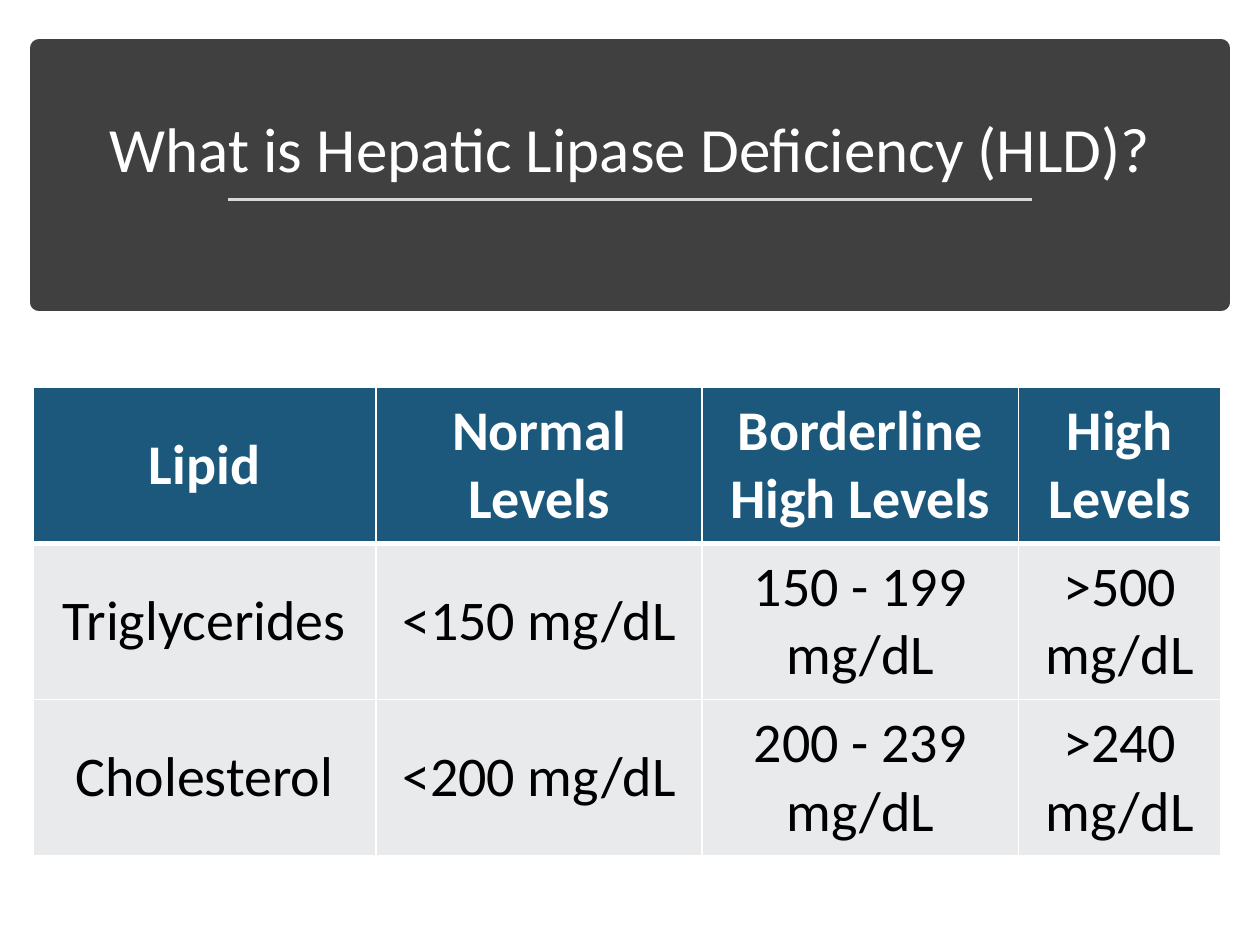
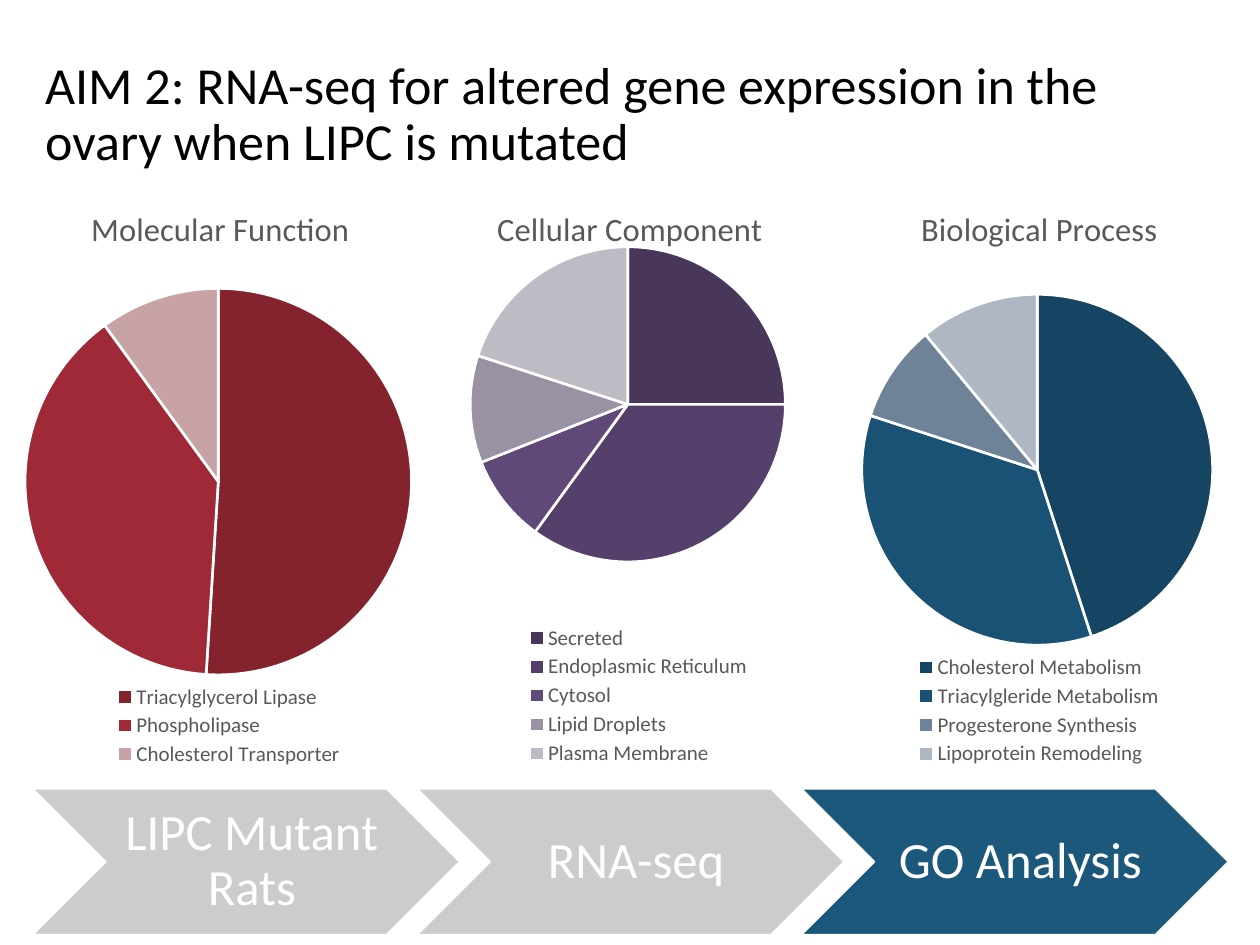
import pptx
import pptx.chart.data
import pptx.dml.color
import pptx.enum.chart
import pptx.enum.shapes
import pptx.enum.text
import pptx.oxml
import pptx.oxml.ns
import pptx.util

Pt = pptx.util.Pt
qn = pptx.oxml.ns.qn
RGB = pptx.dml.color.RGBColor.from_string
ALIGN = pptx.enum.text.PP_ALIGN
ANCHOR = pptx.enum.text.MSO_ANCHOR
SHAPE = pptx.enum.shapes.MSO_SHAPE

FONT = "Calibri"
COLORS = {
    "white": "FFFFFF", "black": "000000", "band": "404040", "rule": "D9D9D9",
    "accent": "1B587C", "row": "E8EAEC", "inactive": "CCCCCC", "chart text": "595959",
}


def write(frame, text, size, color, align=ALIGN.CENTER, anchor=ANCHOR.MIDDLE, bold=False, spacing=0.9):
    """Fill a text frame with one formatted paragraph."""
    frame.word_wrap = True
    frame.vertical_anchor = anchor
    para = frame.paragraphs[0]
    para.alignment = align
    para.line_spacing = spacing
    span = para.add_run()
    span.text = text
    span.font.name = FONT
    span.font.size = Pt(size)
    span.font.bold = bold
    span.font.color.rgb = RGB(COLORS[color])


def place(part, index, area, target=""):
    """Give a chart part a fixed area, as fractions of the chart."""
    for old in part.findall(qn("c:layout")):
        part.remove(old)
    sizes = "".join(f'<c:{key} val="{value}"/>' for key, value in zip("xywh", area))
    part.insert(index, pptx.oxml.parse_xml(
        f'<c:layout {pptx.oxml.ns.nsdecls("c")}><c:manualLayout>{target}'
        f'<c:xMode val="edge"/><c:yMode val="edge"/>{sizes}</c:manualLayout></c:layout>'))


deck = pptx.Presentation()
deck.slide_width = Pt(720)
deck.slide_height = Pt(540)
blank = deck.slide_layouts[6]

# Slide 1: title band
page = deck.slides.add_slide(blank)
band = page.shapes.add_shape(SHAPE.RECTANGLE, Pt(22.3), Pt(27.4), Pt(675.4), Pt(145.4))
band.shadow.inherit = False
band.fill.solid()
band.fill.fore_color.rgb = RGB(COLORS["band"])
band.line.color.rgb = RGB(COLORS["band"])
band.line.width = Pt(10)

box = page.shapes.add_textbox(Pt(31), Pt(36.7), Pt(658), Pt(73.4))
write(box.text_frame, "What is Hepatic Lipase Deficiency (HLD)?", 36, "white", anchor=ANCHOR.BOTTOM)

rule = page.shapes.add_connector(
    pptx.enum.shapes.MSO_CONNECTOR.STRAIGHT, Pt(130.3), Pt(113.8), Pt(589.7), Pt(113.8))
rule.line.color.rgb = RGB(COLORS["rule"])
rule.line.width = Pt(1.75)
rule.element.spPr.append(pptx.oxml.parse_xml(f'<a:effectLst {pptx.oxml.ns.nsdecls("a")}/>'))

# Lipid level table
levels = [
    ["Lipid", "Normal Levels", "Borderline High Levels", "High Levels"],
    ["Triglycerides", "<150 mg/dL", "150 - 199 mg/dL", ">500 mg/dL"],
    ["Cholesterol", "<200 mg/dL", "200 - 239 mg/dL", ">240 mg/dL"],
]
widths = [195.8, 186.5, 180.7, 115.9]
row_height = 89.3
table = page.shapes.add_table(
    3, 4, Pt(19), Pt(221.2), Pt(sum(widths)), Pt(3 * row_height)).table
for column, width in zip(table.columns, widths):
    column.width = Pt(width)
for r, texts in enumerate(levels):
    table.rows[r].height = Pt(row_height)
    header = r == 0
    for c, text in enumerate(texts):
        cell = table.cell(r, c)
        cell.margin_left = cell.margin_right = Pt(9.4)
        cell.margin_top = cell.margin_bottom = Pt(5)
        cell.vertical_anchor = ANCHOR.MIDDLE
        write(cell.text_frame, text, 32, "white" if header else "black", bold=header, spacing=1.0)
        properties = cell._tc.get_or_add_tcPr()
        for side in "LRTB":
            thick = (header and side == "B") or (r == 1 and side == "T")
            properties.append(pptx.oxml.parse_xml(
                f'<a:ln{side} {pptx.oxml.ns.nsdecls("a")} w="{Pt(3 if thick else 1)}"><a:solidFill>'
                f'<a:srgbClr val="{COLORS["white"]}"/></a:solidFill></a:ln{side}>'))
        cell.fill.solid()
        cell.fill.fore_color.rgb = RGB(COLORS["accent" if header else "row"])

# Slide 2: title
page = deck.slides.add_slide(blank)
box = page.shapes.add_textbox(Pt(18.7), Pt(28.8), Pt(683.3), Pt(74.9))
write(box.text_frame, "AIM 2: RNA-seq for altered gene expression in the ovary when LIPC is mutated",
      29.7, "black", align=ALIGN.LEFT)

# Workflow chevrons
steps = [("LIPC Mutant Rats", "inactive"), ("RNA-seq", "inactive"), ("GO Analysis", "accent")]
for i, (text, color) in enumerate(steps):
    step = page.shapes.add_shape(SHAPE.CHEVRON, Pt(18.7 + 219.6 * i), Pt(450.7), Pt(244), Pt(83.5))
    step.shadow.inherit = False
    step.fill.solid()
    step.fill.fore_color.rgb = RGB(COLORS[color])
    step.line.color.rgb = RGB(COLORS["white"])
    step.line.width = Pt(1)
    frame = step.text_frame
    frame.margin_left = Pt(9.4)
    frame.margin_right = frame.margin_top = frame.margin_bottom = Pt(2.9)
    write(frame, text, 29, "white")

# Gene ontology pies: name, plot top and height, legend left, slices
pies = [
    ("Molecular Function", 0.18, 0.65, 0.23, [
        ("Triacylglycerol Lipase", 51, "84222D"),
        ("Phospholipase", 39, "9F2936"),
        ("Cholesterol Transporter", 10, "C8A3A5")]),
    ("Cellular Component", 0.11, 0.53, 0.23, [
        ("Secreted", 25, "49375B"),
        ("Endoplasmic Reticulum", 35, "55406B"),
        ("Cytosol", 9, "604878"),
        ("Lipid Droplets", 11, "9A91A5"),
        ("Plasma Membrane", 20, "BFBBC5")]),
    ("Biological Process", 0.19, 0.59, 0.21, [
        ("Cholesterol Metabolism", 45, "154562"),
        ("Triacylgleride Metabolism", 35, "195274"),
        ("Progesterone Synthesis", 9, "6E8398"),
        ("Lipoprotein Remodeling", 11, "AFB8C2")]),
]
for i, (name, plot_top, plot_height, legend_left, slices) in enumerate(pies):
    data = pptx.chart.data.CategoryChartData()
    data.categories = [label for label, value, color in slices]
    data.add_series(name, [value for label, value, color in slices])
    chart = page.shapes.add_chart(
        pptx.enum.chart.XL_CHART_TYPE.PIE, Pt(234 * i), Pt(103.7), Pt(252), Pt(339.8), data).chart
    chart.font.name = FONT
    chart.font.size = Pt(10)

    chart.has_title = True
    span = chart.chart_title.text_frame.paragraphs[0].add_run()
    span.text = name
    span.font.name = FONT
    span.font.size = Pt(18.6)
    span.font.bold = False
    span.font.color.rgb = RGB(COLORS["chart text"])

    chart.has_legend = True
    legend = chart.legend
    legend.position = pptx.enum.chart.XL_LEGEND_POSITION.BOTTOM
    legend.include_in_layout = False
    legend.font.name = FONT
    legend.font.size = Pt(12)
    legend.font.color.rgb = RGB(COLORS["chart text"])
    legend_height = round(0.05 * len(slices), 2)
    place(chart.element.find(".//" + qn("c:legend")), 1,
          (legend_left, round(0.99 - legend_height, 2), 0.58, legend_height))
    place(chart.element.find(".//" + qn("c:plotArea")), 0,
          (0.04, plot_top, 0.91, plot_height), '<c:layoutTarget val="inner"/>')

    plot = chart.plots[0]
    plot.vary_by_categories = True
    for s, (label, value, color) in enumerate(slices):
        wedge = plot.series[0].points[s].format
        wedge.fill.solid()
        wedge.fill.fore_color.rgb = RGB(color)
        wedge.line.color.rgb = RGB(COLORS["white"])
        wedge.line.width = Pt(1.5)

deck.save("out.pptx")
